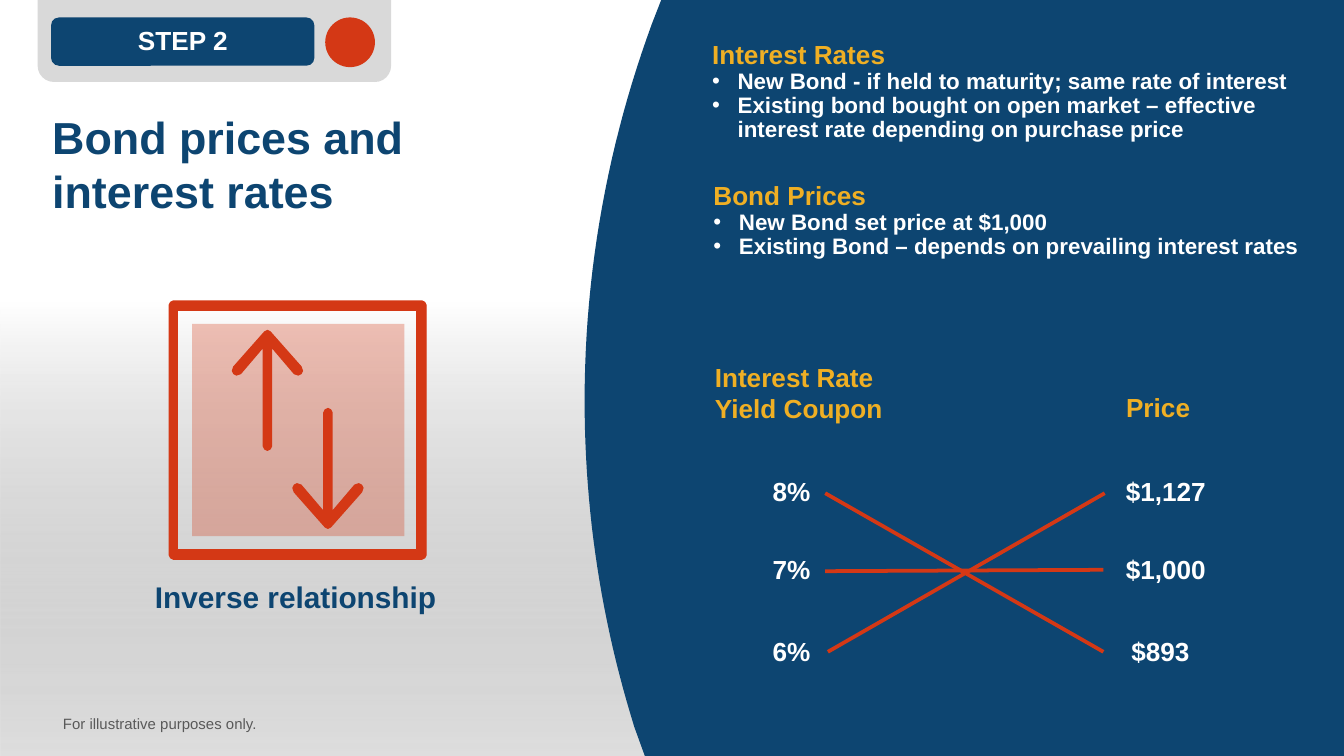
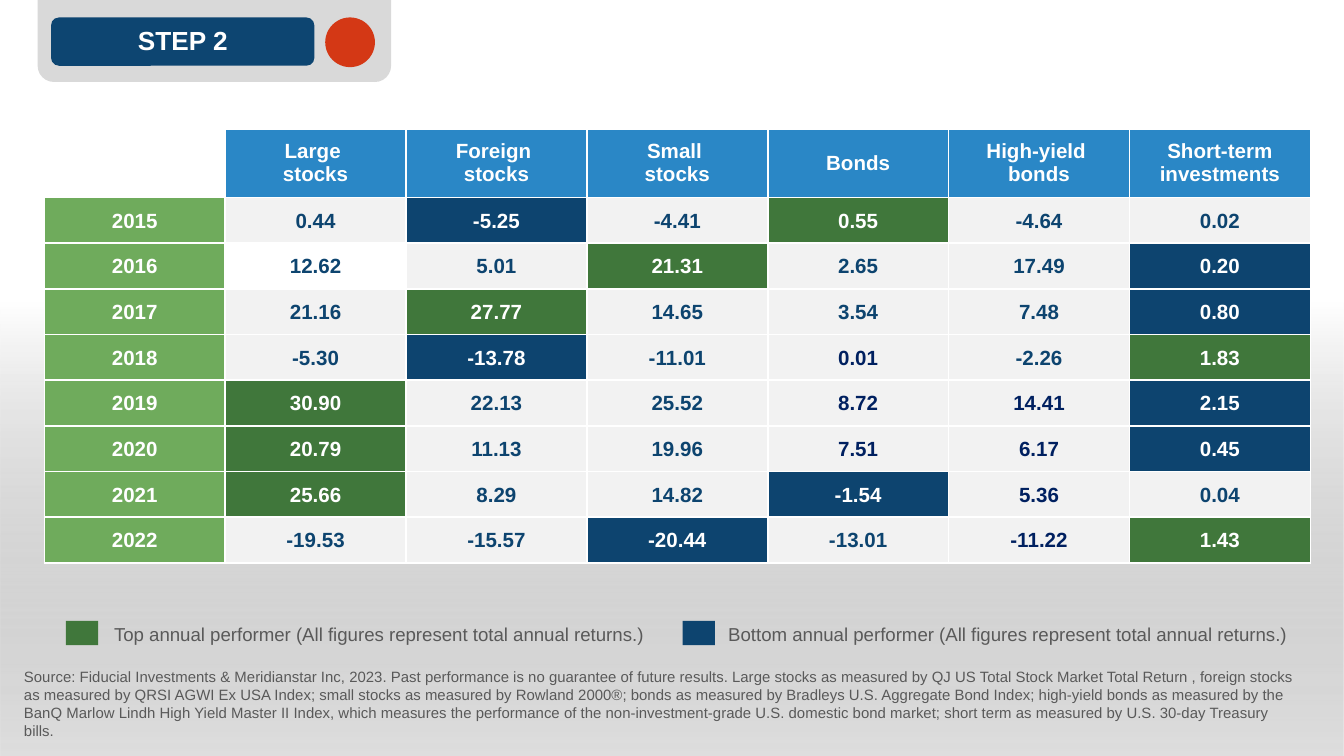
import pptx
import pptx.util
import pptx.dml.color
import pptx.enum.dml
import pptx.enum.shapes
import pptx.enum.text
import pptx.oxml
import pptx.oxml.ns

PX = 9144
FONT = "Arial"
COLORS = {
    "white": "FFFFFF", "navy": "0D4571", "deep": "0D446F", "ink": "002060",
    "gold": "EFAF24", "red": "D43815", "tab": "D9D9D9", "gray": "595959",
    "shade": "808080", "green": "40773B", "leaf": "6FAB5C", "sky": "2A87C6",
    "pale": "F2F2F2",
}
SHAPE = pptx.enum.shapes.MSO_SHAPE
ANCHOR = pptx.enum.text.MSO_ANCHOR
ALIGN = {"l": pptx.enum.text.PP_ALIGN.LEFT, "c": pptx.enum.text.PP_ALIGN.CENTER}

HEADERS = ["Large \nstocks", "Foreign \nstocks", "Small \nstocks", "Bonds",
           "High-yield \nbonds", "Short-term investments"]
RETURNS = {
    "2015": "0.44 -5.25 -4.41 0.55 -4.64 0.02",
    "2016": "12.62 5.01 21.31 2.65 17.49 0.20",
    "2017": "21.16 27.77 14.65 3.54 7.48 0.80",
    "2018": "-5.30 -13.78 -11.01 0.01 -2.26 1.83",
    "2019": "30.90 22.13 25.52 8.72 14.41 2.15",
    "2020": "20.79 11.13 19.96 7.51 6.17 0.45",
    "2021": "25.66 8.29 14.82 -1.54 5.36 0.04",
    "2022": "-19.53 -15.57 -20.44 -13.01 -11.22 1.43",
}
INK_CELLS = {("2018", 4), ("2019", 4), ("2019", 5), ("2020", 4),
             ("2020", 5), ("2021", 5), ("2022", 5)}
SOURCE = (
    "Source: Fiducial Investments & Meridianstar Inc, 2023. Past performance is no "
    "guarantee of future results. Large stocks as measured by QJ US Total Stock Market "
    "Total Return , foreign stocks as measured by QRSI AGWI Ex USA Index; small stocks "
    "as measured by Rowland 2000®; bonds as measured by Bradleys U.S. Aggregate Bond "
    "Index; high-yield bonds as measured by the BanQ Marlow Lindh High Yield Master II "
    "Index, which measures the performance of the non-investment-grade U.S. domestic "
    "bond market; short term as measured by U.S. 30-day Treasury bills."
)


def rgb(name):
    return pptx.dml.color.RGBColor.from_string(COLORS[name])


def element(xml):
    return pptx.oxml.parse_xml(xml.replace(
        ">", f" {pptx.oxml.ns.nsdecls('a')}>", 1) if "/>" not in xml.split(">")[0] + ">"
        else xml.replace("/>", f" {pptx.oxml.ns.nsdecls('a')}/>", 1))


def set_alpha(fill_element, percent):
    fill_element[0].append(element(f'<a:alpha val="{percent * 1000}"/>'))


def write(tf, text, size=14, color="white", bold=True, align="l", spacing=None,
          bullet=False, more=False):
    p = tf.add_paragraph() if more else tf.paragraphs[0]
    p.alignment = ALIGN[align]
    if spacing:
        p.line_spacing = spacing
    if bullet:
        pPr = p._p.get_or_add_pPr()
        pPr.set("marL", str(19 * PX))
        pPr.set("indent", str(-19 * PX))
        pPr.append(element('<a:buFont typeface="Arial"/>'))
        pPr.append(element('<a:buChar char="•"/>'))
    for i, line in enumerate(text.split("\n")):
        if i:
            p.add_line_break()
        r = p.add_run()
        r.text = line
        r.font.name = FONT
        r.font.size = pptx.util.Pt(size)
        r.font.bold = bold
        r.font.color.rgb = rgb(color)


def bezier(a, b, c, d, steps=24):
    for i in range(1, steps + 1):
        t = i / steps
        u = 1 - t
        yield tuple(u**3 * w + 3 * u * u * t * x + 3 * u * t * t * y + t**3 * z
                    for w, x, y, z in zip(a, b, c, d))


class Deck:
    def __init__(self):
        self.prs = pptx.Presentation()
        self.prs.slide_width = 1000 * PX
        self.prs.slide_height = self.prs.slide_width * 9 // 16
        self.s = None

    def slide(self):
        self.s = self.prs.slides.add_slide(self.prs.slide_layouts[6])
        self.backdrop()

    def backdrop(self):
        sp = self.shape(SHAPE.RECTANGLE, 0, 0, 1000, 563, "white")
        sp.height = self.prs.slide_height
        sp.fill.gradient()
        sp.fill.gradient_angle = 90
        first, last = sp.fill.gradient_stops
        first.position, last.position = 0, 0.6
        first.color.rgb, last.color.rgb = rgb("shade"), rgb("white")
        set_alpha(first._gs, 25)

    def style(self, sp, fill, line=None):
        sp.shadow.inherit = False
        sp.fill.solid()
        sp.fill.fore_color.rgb = rgb(fill)
        if line:
            sp.line.color.rgb = rgb(line)
            sp.line.width = pptx.util.Pt(0.75)
        else:
            sp.line.fill.background()
        return sp

    def shape(self, kind, x, y, w, h, fill):
        sp = self.s.shapes.add_shape(kind, x * PX, y * PX, w * PX, h * PX)
        return self.style(sp, fill)

    def outline(self, contours, fill, line=None):
        scaled = [[(x * PX, y * PX) for x, y in c] for c in contours]
        builder = self.s.shapes.build_freeform(*scaled[0][0], scale=1.0)
        for i, points in enumerate(scaled):
            if i:
                builder.move_to(*points[0])
            builder.add_line_segments(points[1:], close=True)
        return self.style(builder.convert_to_shape(), fill, line)

    def text(self, x, y, w, h, text, wrap=True, anchor=ANCHOR.TOP, **fmt):
        sp = self.s.shapes.add_textbox(x * PX, y * PX, w * PX, h * PX)
        tf = sp.text_frame
        tf.word_wrap = wrap
        tf.auto_size = pptx.enum.text.MSO_AUTO_SIZE.SHAPE_TO_FIT_TEXT
        tf.vertical_anchor = anchor
        write(tf, text, **fmt)
        return tf

    def bullets(self, x, y, w, h, heading, items):
        tf = self.text(x, y, w, h, heading, color="gold", spacing=0.9)
        for item in items:
            write(tf, item, size=12, spacing=0.9, bullet=True, more=True)

    def line(self, x1, y1, x2, y2):
        c = self.s.shapes.add_connector(pptx.enum.shapes.MSO_CONNECTOR.STRAIGHT,
                                        x1 * PX, y1 * PX, x2 * PX, y2 * PX)
        c.line.color.rgb = rgb("red")
        c.line.width = pptx.util.Pt(2)
        c._element.spPr.append(element("<a:effectLst/>"))

    def arrow(self, x, tip, direction):
        half = [(0, 0), (2, 1), (25, 27), (26, 30), (25, 32), (23, 33), (20, 32),
                (3, 12), (3, 86), (2, 88), (0, 89)]
        offsets = half + [(-dx, dy) for dx, dy in half[-2:0:-1]]
        self.outline([[(x + dx, tip + direction * dy) for dx, dy in offsets]],
                     "red", "red")

    def step_tab(self, label):
        sp = self.shape(SHAPE.ROUND_2_SAME_RECTANGLE, 28, 0, 263, 61, "tab")
        sp.rotation = 180
        sp.adjustments[0] = 0.198
        self.shape(SHAPE.ROUNDED_RECTANGLE, 38, 13, 196, 36, "navy")
        self.text(37, 18, 198, 30, label, align="c", spacing=0.8)
        self.shape(SHAPE.OVAL, 242, 13, 37, 37, "red")

    def cell(self, cell, text, fill, color="white", tight=True):
        cell.vertical_anchor = ANCHOR.MIDDLE
        if tight:
            cell.margin_left = cell.margin_right = cell.margin_top = PX
            cell.margin_bottom = 0
        if text:
            write(cell.text_frame, text, size=11, color=color, align="c")
        tcPr = cell._tc.get_or_add_tcPr()
        for side in ("lnL", "lnR", "lnT", "lnB"):
            tcPr.append(element(
                f'<a:{side} w="12700"><a:solidFill><a:srgbClr val="{COLORS["white"]}"/>'
                f'</a:solidFill></a:{side}>'))
        if fill:
            cell.fill.solid()
            cell.fill.fore_color.rgb = rgb(fill)
        else:
            cell.fill.background()

    def returns_table(self, x, y, w, header_h, row_h):
        n_rows, n_cols = len(RETURNS) + 1, len(HEADERS) + 1
        table = self.s.shapes.add_table(
            n_rows, n_cols, x * PX, y * PX, w * PX,
            (header_h + row_h * len(RETURNS)) * PX).table
        table.first_row = table.horz_banding = False
        for col in table.columns:
            col.width = w * PX // n_cols
        for i, row in enumerate(table.rows):
            row.height = (row_h if i else header_h) * PX
        self.cell(table.cell(0, 0), "", "white", tight=False)
        for j, header in enumerate(HEADERS, 1):
            self.cell(table.cell(0, j), header, "sky", tight=False)
        for i, (year, line) in enumerate(RETURNS.items(), 1):
            values = line.split()
            marks = {max(values, key=float): "green", min(values, key=float): "deep"}
            self.cell(table.cell(i, 0), year, "leaf")
            for j, value in enumerate(values, 1):
                plain = None if (year, j) == ("2016", 1) else "pale"
                color = "ink" if (year, j) in INK_CELLS else "deep"
                self.cell(table.cell(i, j), value, marks.get(value, plain),
                          "white" if value in marks else color)


def bond_slide(deck):
    deck.slide()
    deck.shape(SHAPE.RECTANGLE, 822, 0, 178, 563, "navy").height = deck.prs.slide_height
    curve = [(480, 563), (472, 541),
             *bezier((472, 541), (448, 464), (435, 383), (435, 298)),
             *bezier((435, 298), (435, 200), (453, 105), (485, 18))]
    deck.outline([[(492, 0), (923, 0), (923, 563), *curve]], "navy")

    deck.bullets(520, 26, 463, 107, "Interest Rates", [
        "New Bond - if held to maturity; same rate of interest",
        "Existing bond bought on open market – effective interest rate depending on "
        "purchase price"])
    deck.bullets(521, 131, 463, 68, "Bond Prices", [
        "New Bond set price at $1,000",
        "Existing Bond – depends on prevailing interest rates"])
    deck.text(522, 264, 178, 57, "Interest Rate \nYield Coupon", color="gold")
    deck.text(828, 286, 75, 34, "Price", color="gold")
    for y, rate, x, price in [(349, "8%", 821, "$1,127"), (407, "7%", 821, "$1,000"),
                              (468, "6%", 817, "$893")]:
        deck.text(565, y, 55, 34, rate)
        deck.text(x, y, 93, 34, price, align="c")
    deck.text(29, 77, 329, 91, "Bond prices and interest rates", size=24, color="navy")
    deck.step_tab("STEP 2")
    deck.line(614, 425, 821, 424)
    deck.line(614, 367, 821, 485)
    deck.line(822, 367, 616, 485)

    deck.text(85, 429, 270, 35, "Inverse relationship", size=16, color="navy",
              align="c", spacing=0.9)
    deck.arrow(199, 246, 1)
    deck.arrow(244, 393, -1)
    left, top, right, bottom = 126, 224, 317, 416
    rim = [(left + 3, top), (right - 3, top), (right - 1, top + 1), (right, top + 3),
           (right, bottom - 3), (right - 1, bottom - 1), (right - 3, bottom),
           (left + 3, bottom), (left + 1, bottom - 1), (left, bottom - 3),
           (left, top + 3), (left + 1, top + 1)]
    opening = [(132, 231), (132, 409), (310, 409), (310, 231)]
    deck.outline([rim, opening], "red", "red")
    tint = deck.shape(SHAPE.RECTANGLE, 143, 241, 158, 158, "red")
    set_alpha(tint._element.spPr.find(pptx.oxml.ns.qn("a:solidFill")), 30)
    deck.text(37, 527, 167, 24, "For illustrative purposes only.", wrap=False,
              size=8, color="gray", bold=False)


def returns_slide(deck):
    deck.slide()
    deck.step_tab("STEP 2")
    note = {"color": "gray", "bold": False, "anchor": ANCHOR.BOTTOM}
    deck.text(8, 505, 969, 50, SOURCE, size=8, **note)
    for x, fill, text_x, w, rank in [(49, "green", 75, 429, "Top"),
                                     (508, "deep", 532, 451, "Bottom")]:
        deck.shape(SHAPE.RECTANGLE, x, 462, 24, 18, fill)
        deck.text(text_x, 458, w, 27,
                  f"{rank} annual performer (All figures represent total annual returns.)",
                  size=10, **note)
    deck.returns_table(33, 96, 942, 51, 34)


def main():
    deck = Deck()
    bond_slide(deck)
    returns_slide(deck)
    deck.prs.save("out.pptx")


if __name__ == "__main__":
    main()
